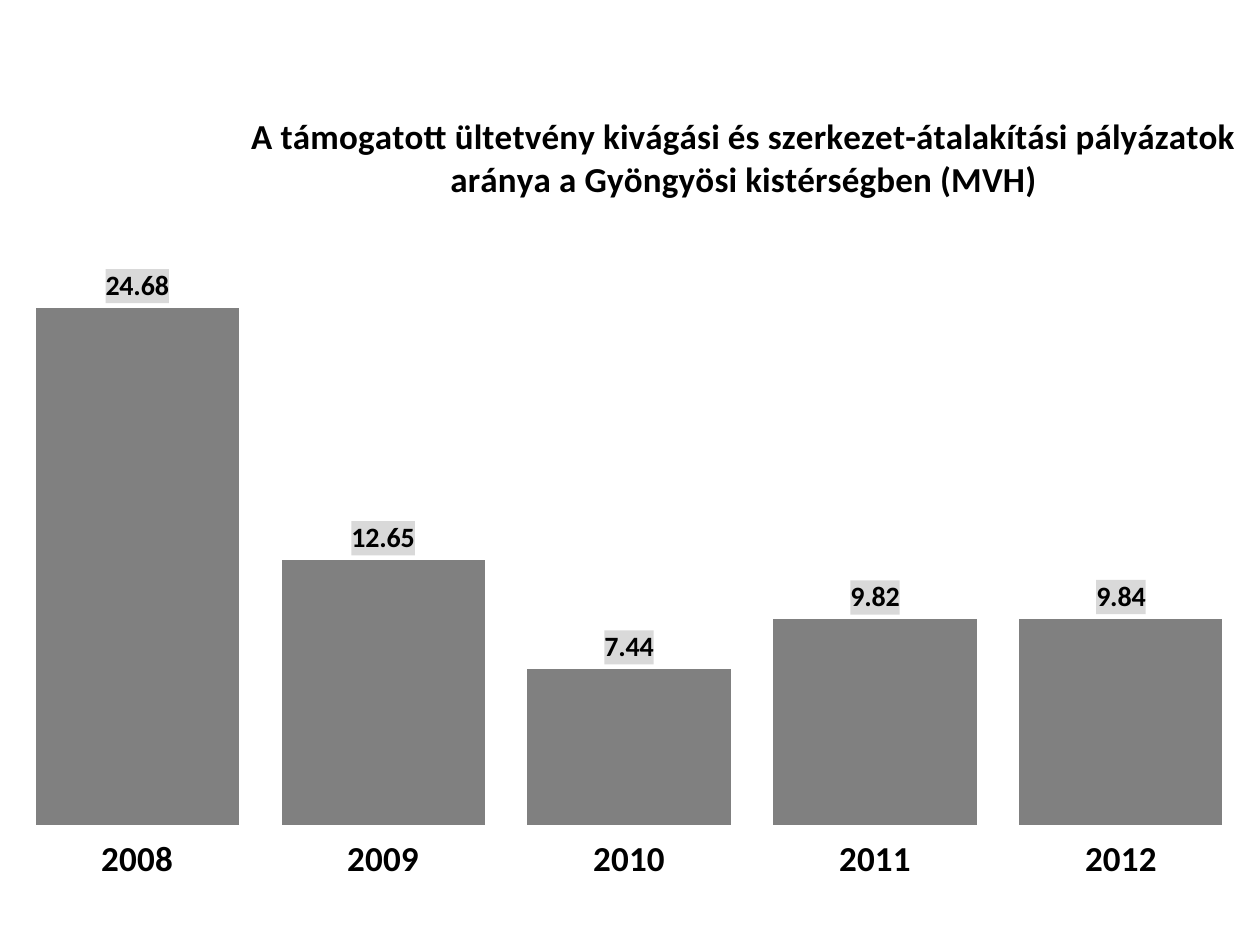
import pptx
import pptx.chart.data
import pptx.dml.color
import pptx.enum.chart
import pptx.oxml
import pptx.oxml.ns
import pptx.util

Pt = pptx.util.Pt
RGB = pptx.dml.color.RGBColor.from_string
NS = pptx.oxml.ns.nsdecls("c", "a")
COLORS = {"text": "000000", "bar": "808080", "label": "D9D9D9"}
YEARS = ["2008", "2009", "2010", "2011", "2012"]
SHARES = [24.68, 12.65, 7.44, 9.82, 9.84]
HEADING = ("A támogatott ültetvény kivágási és szerkezet-átalakítási pályázatok "
           "aránya a Gyöngyösi kistérségben (MVH)")


def manual_layout(target=None, **fractions):
    """Return a layout element placed by fractions of the chart's size."""
    inner = f'<c:layoutTarget val="{target}"/>' if target else ""
    modes = '<c:xMode val="edge"/><c:yMode val="edge"/>'
    values = "".join(f'<c:{key} val="{value}"/>' for key, value in fractions.items())
    return pptx.oxml.parse_xml(
        f"<c:layout {NS}><c:manualLayout>{inner}{modes}{values}</c:manualLayout></c:layout>")


def style_font(font, size, bold):
    font.name = "Calibri"
    font.size = Pt(size)
    font.bold = bold
    font.color.rgb = RGB(COLORS["text"])


prs = pptx.Presentation()
prs.slide_width, prs.slide_height = Pt(720), Pt(540)
slide = prs.slides.add_slide(prs.slide_layouts[6])

data = pptx.chart.data.CategoryChartData(number_format="0.00")
data.categories = YEARS
data.add_series("Series 1", SHARES)
chart = slide.shapes.add_chart(
    pptx.enum.chart.XL_CHART_TYPE.COLUMN_CLUSTERED,
    Pt(-6.5), Pt(31), Pt(732), Pt(479), data).chart
chart.has_legend = False
style_font(chart.font, 10, False)

# Heading
chart.has_title = True
heading = chart.chart_title
heading.text_frame.text = HEADING
style_font(heading.text_frame.paragraphs[0].runs[0].font, 20, True)
heading.include_in_layout = False

# Axes
year_axis = chart.category_axis
year_axis.tick_label_position = pptx.enum.chart.XL_TICK_LABEL_POSITION.LOW
year_axis.major_tick_mark = pptx.enum.chart.XL_TICK_MARK.NONE
year_axis.format.line.fill.background()
style_font(year_axis.tick_labels.font, 20, True)
share_axis = chart.value_axis
share_axis.minimum_scale, share_axis.maximum_scale = 0, 30
share_axis.has_major_gridlines = False
share_axis.visible = False

# Columns and their labels
columns = chart.plots[0]
columns.gap_width, columns.overlap = 21, -25
columns.vary_by_categories = False
shares = columns.series[0]
shares.format.fill.solid()
shares.format.fill.fore_color.rgb = RGB(COLORS["bar"])
labels = shares.data_labels
labels.show_value = True
labels.number_format, labels.number_format_is_linked = "0.00", False
labels.position = pptx.enum.chart.XL_LABEL_POSITION.OUTSIDE_END
style_font(labels.font, 16, True)
label_fill = pptx.oxml.parse_xml(
    f'<c:spPr {NS}><a:solidFill><a:srgbClr val="{COLORS["label"]}"/></a:solidFill></c:spPr>')
labels._element.find(pptx.oxml.ns.qn("c:txPr")).addprevious(label_fill)

# Places of the heading and the plot area
title_xml = heading._element
plot_xml = chart._chartSpace.chart.plotArea
for parent in (title_xml, plot_xml):
    for old in parent.findall(pptx.oxml.ns.qn("c:layout")):
        parent.remove(old)
title_xml.find(pptx.oxml.ns.qn("c:tx")).addnext(manual_layout(x=0.2, y=0.06))
plot_xml.insert(0, manual_layout("inner", x=0.02, y=0.17, w=0.96, h=0.75))

prs.save("out.pptx")
